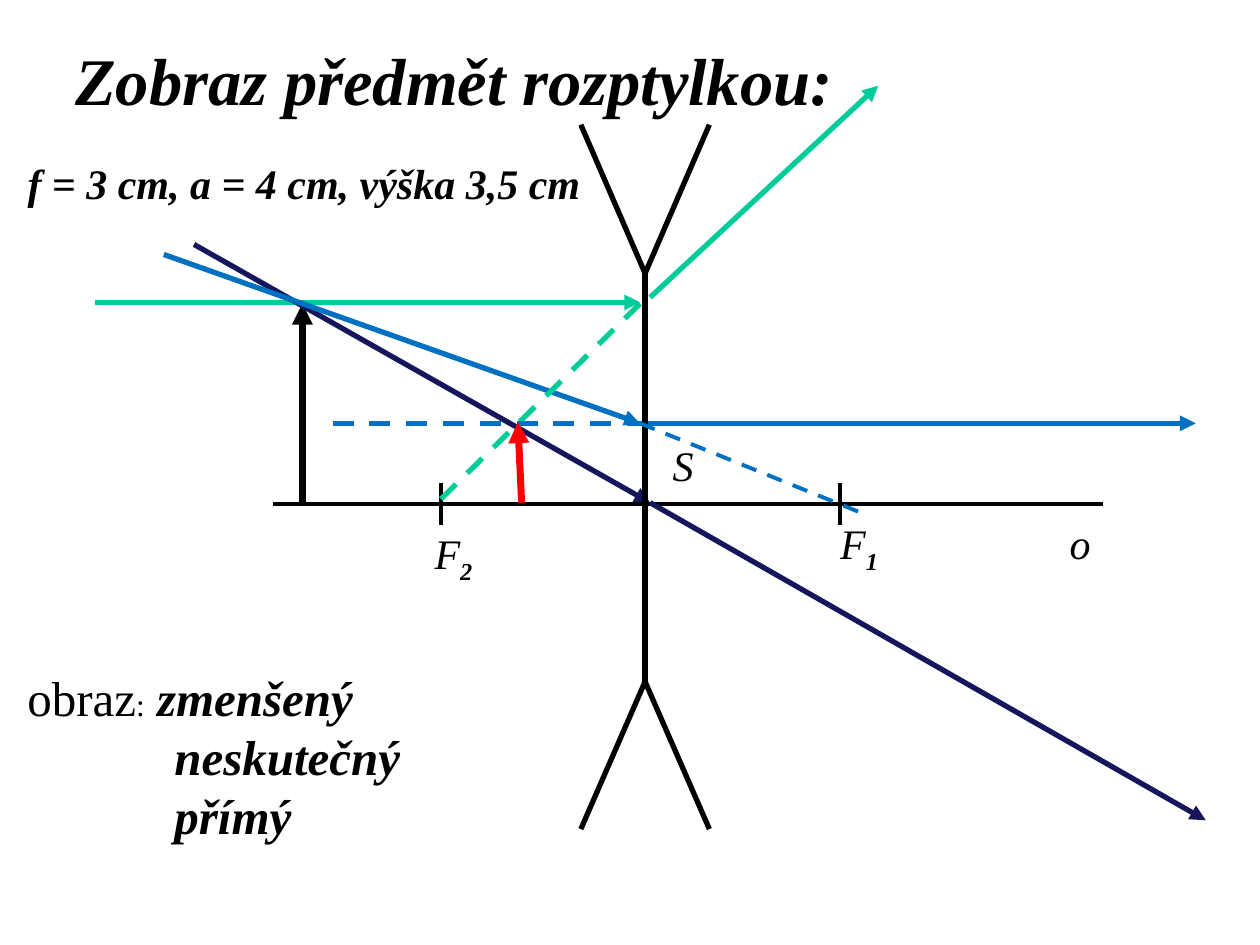
"""Build the slide on drawing the image formed by a diverging lens."""
from lxml import etree
from pptx import Presentation, util as u
from pptx.dml.color import RGBColor
from pptx.enum import dml, shapes, text
from pptx.oxml.ns import qn

C = {"ink": "000000", "parallel": "00CC99", "centre": "16165D",
     "focal": "0070C0", "image": "FF0000"}
FONT = "Times New Roman"

prs = Presentation()
prs.slide_width, prs.slide_height = u.Inches(10), u.Inches(7.5)
s = prs.slides.add_slide(prs.slide_layouts[6])
COL, ROW = prs.slide_width / 100, prs.slide_height / 75
AXIS, LENS, TOP, BOTTOM = 40, 51.2, 21.7, 54.1
F1, F2, TICK = 66.7, 35, 1.7
HIT, LOW = 50.8, 33.6


def add_line(parent, ends, color, width, style=""):
    x1, y1, x2, y2 = ends
    cx = parent.add_connector(shapes.MSO_CONNECTOR.STRAIGHT, round(x1 * COL),
                              round(y1 * ROW), round(x2 * COL), round(y2 * ROW))
    cx.line.color.rgb = RGBColor.from_string(C[color])
    cx.line.width = u.Pt(width)
    if style == "dash":
        cx.line.dash_style = dml.MSO_LINE.DASH
    if style == "arrow":
        ln = cx.line._get_or_add_ln()
        etree.SubElement(ln, qn("a:tailEnd"), type="triangle")
    etree.SubElement(cx._element.spPr, qn("a:effectLst"))


def add_text(box, paragraphs):
    x, y, w, h = box
    sp = s.shapes.add_textbox(round(x * COL), round(y * ROW),
                              round(w * COL), round(h * ROW))
    tf = sp.text_frame
    tf.word_wrap = True
    for i, runs in enumerate(paragraphs):
        p = tf.add_paragraph() if i else tf.paragraphs[0]
        for words, size, look in runs:
            r = p.add_run()
            r.text = words
            r.font.name, r.font.size = FONT, u.Pt(size)
            r.font.bold, r.font.italic = "b" in look, "i" in look
            r.font.color.rgb = RGBColor.from_string(C["ink"])
            if "sub" in look.split():
                r.font._element.set("baseline", "-25000")
    return tf


title = add_text((5, 0, 85, 12.5), [[("Zobraz předmět rozptylkou:", 38, "b i")]])
title.vertical_anchor = text.MSO_ANCHOR.MIDDLE

given = add_text((1.2, 12.3, 46.1, 4.8),
                 [[("f = 3 cm, a = 4 cm, výška 3,5 cm", 24, "b i")]])
given.paragraphs[0].line_spacing = 0.95

for box, name, index in [((33.5, 41.4, 5.9, 5), "F", "2"),
                         ((65.7, 40.6, 7.9, 5.1), "F", "1"),
                         ((52.4, 34.4, 3.3, 5), "S", ""),
                         ((83.9, 40.6, 7.9, 5.1), "o", "")]:
    label = [(name, 24, "i")]
    if index:
        label.append((index, 24, "i sub"))
    add_text(box, [label])

result = add_text((1.2, 52.5, 51.4, 15.2),
                  [[("obraz", 28, ""), (":", 18, ""), (" zmenšený", 28, "b i")],
                   [("neskutečný", 28, "b i")],
                   [("přímý", 28, "b i")]])
for p in result.paragraphs[1:]:
    p._p.get_or_add_pPr().set("marL", str(u.Pt(84)))

for ends, color, width, style in [
        ((21.7, AXIS, 87.5, AXIS), "ink", 2.25, ""),
        ((24, 39.9, 24, 24.1), "ink", 4, "arrow"),
        ((7.5, 24, HIT, 24), "parallel", 3, "arrow"),
        ((F1, AXIS - TICK, F1, AXIS + TICK), "ink", 2.25, ""),
        ((F2, AXIS - TICK, F2, AXIS + TICK), "ink", 2.25, ""),
        ((15.4, 19.4, 51.6, 39.9), "centre", 3, "arrow"),
        ((13, 20.2, HIT, LOW), "focal", 3, "arrow"),
        ((HIT, LOW, 94.9, LOW), "focal", 3, "arrow"),
        ((F2, 39.6, HIT, 24.1), "parallel", 3, "dash"),
        ((26.4, LOW, 50.9, LOW), "focal", 3, "dash"),
        ((51.6, 23.6, 69.7, 6.8), "parallel", 3, "arrow"),
        ((51.6, 39.9, 95.7, 65.1), "centre", 3, "arrow"),
        ((41.4, 39.9, 41.1, 33.5), "image", 4, "arrow")]:
    add_line(s.shapes, ends, color, width, style)

lens = s.shapes.add_group_shape()
add_line(lens.shapes, (LENS, TOP, LENS, BOTTOM), "ink", 3)
for side in (-5.1, 5.1):
    add_line(lens.shapes, (LENS + side, 9.9, LENS, TOP), "ink", 3)
    add_line(lens.shapes, (LENS, BOTTOM, LENS + side, 65.8), "ink", 3)

add_line(s.shapes, (HIT, LOW, 68.1, 40.6), "focal", 2.25, "dash")

prs.save("out.pptx")
